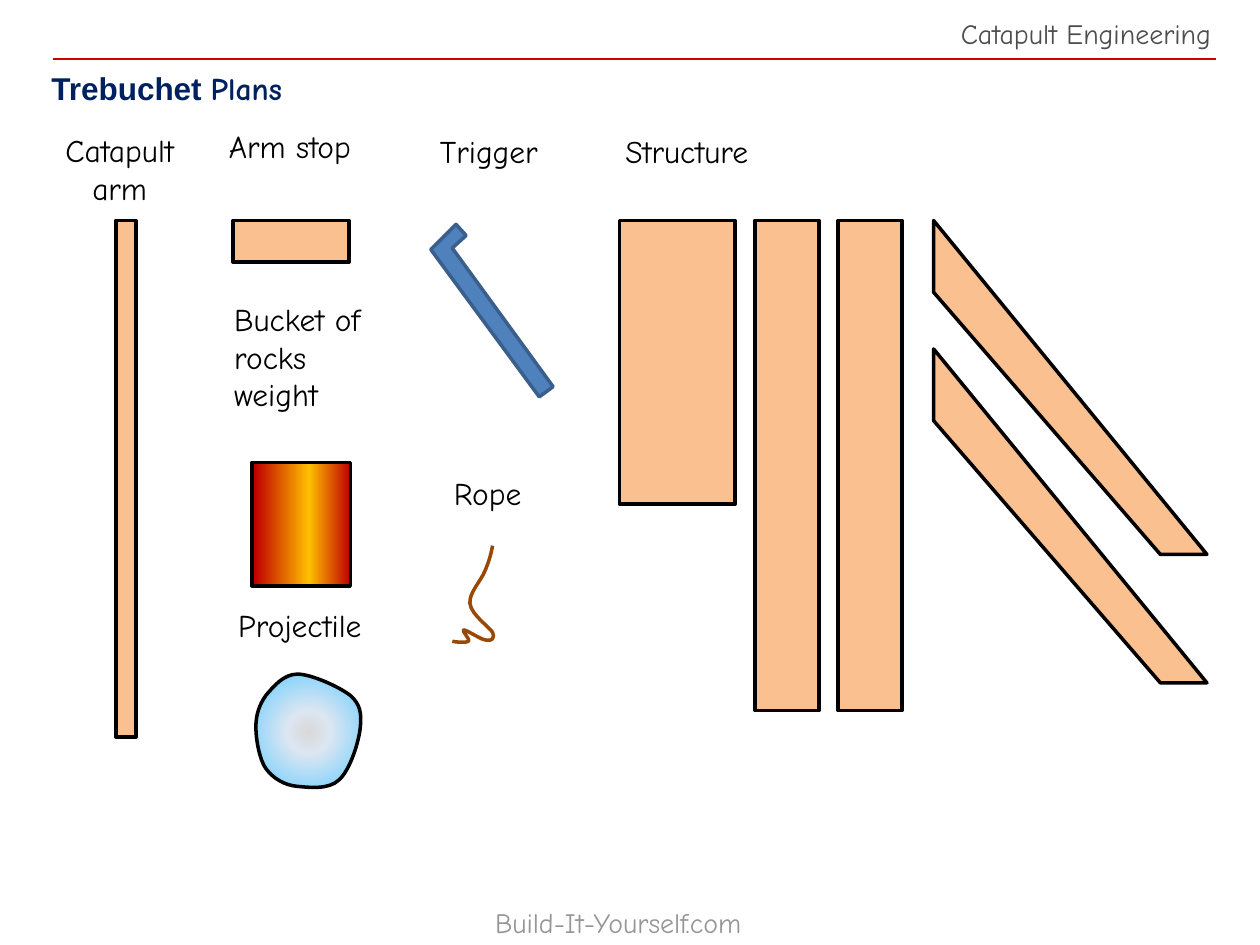
"""Build the Trebuchet Plans slide: labelled catapult parts."""
from lxml import etree
from pptx import Presentation
from pptx.dml.color import RGBColor
from pptx.enum import shapes, text
from pptx.oxml import ns
from pptx.util import Pt

BLACK, WOOD = "000000", "FAC090"
LEFT, CENTER, RIGHT = text.PP_ALIGN.LEFT, text.PP_ALIGN.CENTER, text.PP_ALIGN.RIGHT
SANS, COMIC = "Arial", "Comic Neue"

HEADER = ("Catapult Engineering", 529.9, 5.8, 169.2, 26.6, RIGHT, 16, "4D4D4D")
FOOTER = ("Build-It-Yourself.com", 275.8, 514.1, 177.1, 26.6, LEFT, 16, "969696")
TITLE = [("Trebuchet ", SANS), ("Plans", COMIC)]
TITLE_BOX = (22.3, 36, 429.1, 20.2)
LABELS = [
    ("Bucket of rocks\nweight", 126.7, 167.8, 95, 72.7, LEFT),
    ("Structure", 329.8, 72, 125.3, 51.1, CENTER),
    ("Trigger", 216.7, 72, 125.3, 51.1, CENTER),
    ("Catapult arm", 18, 71.3, 100.8, 72.7, CENTER),
    ("Projectile", 108.7, 342.7, 125.3, 28.8, CENTER),
    ("Arm stop", 103, 69.1, 125.3, 51.1, CENTER),
    ("Rope", 216, 267.1, 125.3, 51.1, CENTER),
]
BOARD_TOP = 126
BOARDS = [
    (66.2, 11.5, 295.2),
    (133.2, 66.2, 23.8),
    (353.9, 66.2, 162),
    (431.3, 36.7, 280),
    (478.8, 36.7, 280),
]
BRACE_LEFT, BRACE_TOPS = 533.5, (126, 199.4)
BRACE = [(0, 0), (156.2, 190.8), (129.6, 190.8), (0, 41)]
TRIGGER = [(266.4, 134.6), (260.6, 128.2), (246.2, 142.6),
           (308.2, 226.8), (316.1, 221), (258.5, 141.8)]
ROPE = [
    (281.5, 311.8),
    (280.8, 316.1), (279.4, 321.1), (277.2, 326.2),
    (275, 331.9), (267.8, 339.1), (268.6, 344.9),
    (269.3, 351.4), (280.1, 358.6), (281.5, 361.4),
    (283, 365), (280.8, 366.5), (277.9, 365.8),
    (275, 365.8), (267.1, 360), (265, 360),
    (263.5, 360), (268.6, 365), (267.8, 366.5),
    (266.4, 367.2), (262.8, 367.2), (258.5, 366.5),
]
PROJECTILE = [
    (151.9, 439.2),
    (156.2, 445), (162.7, 448.6), (169.2, 449.3),
    (176.4, 450), (187.9, 451.4), (193.7, 445.7),
    (200.2, 439.9), (205.2, 423.4), (205.9, 415.4),
    (206.6, 407.5), (205.9, 402.5), (200.2, 397.4),
    (193.7, 392.4), (177.8, 385.2), (169.9, 385.2),
    (162, 385.2), (156.2, 392.4), (151.9, 397.4),
    (148.3, 402.5), (146.2, 408.2), (146.2, 415.4),
    (146.2, 422.6), (148.3, 434.2), (151.9, 439.2),
]
BUCKET = (144, 264.2, 56.2, 70.6)
BUCKET_STOPS = [(0, "C00000"), (42, "FFC000"), (97, "C00000")]
STONE_STOPS = [(0, "D9D9D9"), (28, "DCE6F2"), (97, "66CCFF")]


def color(value):
    return RGBColor.from_string(value)


def add_child(parent, tag, **attributes):
    child = etree.SubElement(parent, ns.qn(tag))
    for name, value in attributes.items():
        child.set(name, str(value))
    return child


def style(shape, fill=None, line=BLACK):
    shape.shadow.inherit = False
    if fill:
        shape.fill.solid()
        shape.fill.fore_color.rgb = color(fill)
    else:
        shape.fill.background()
    shape.line.color.rgb = color(line)
    shape.line.width = Pt(2)
    return shape


def set_gradient(shape, stops, circular=False):
    properties = shape.element.spPr
    gradient = etree.Element(ns.qn("a:gradFill"), rotWithShape="1")
    stop_list = add_child(gradient, "a:gsLst")
    for position, value in stops:
        stop = add_child(stop_list, "a:gs", pos=position * 1000)
        add_child(stop, "a:srgbClr", val=value)
    if circular:
        focus = add_child(gradient, "a:path", path="circle")
        add_child(focus, "a:fillToRect", l=50000, t=50000, r=50000, b=50000)
    else:
        add_child(gradient, "a:lin", ang=180 * 60000, scaled=0)
    properties.replace(properties.find(ns.qn("a:noFill")), gradient)


def add_rectangle(slide, left, top, width, height, fill=None):
    box = map(Pt, (left, top, width, height))
    return style(slide.shapes.add_shape(shapes.MSO_SHAPE.RECTANGLE, *box), fill)


def add_outline(slide, points, fill=None, line=BLACK, close=True):
    start, *others = [(Pt(x), Pt(y)) for x, y in points]
    builder = slide.shapes.build_freeform(*start)
    builder.add_line_segments(others, close=close)
    return style(builder.convert_to_shape(), fill, line)


def add_curve(slide, points, line=BLACK, close=True):
    """Join cubic curves, each given by two control points and an end point."""
    shape = add_outline(slide, points, line=line, close=close)
    segments = list(shape.element.iter(ns.qn("a:lnTo")))
    for first in range(0, len(segments), 3):
        curve = etree.Element(ns.qn("a:cubicBezTo"))
        segments[first].addprevious(curve)
        for segment in segments[first:first + 3]:
            curve.append(segment[0])
            segment.getparent().remove(segment)
    return shape


def add_frame(slide, *box):
    frame = slide.shapes.add_textbox(*map(Pt, box)).text_frame
    frame.word_wrap = True
    return frame


def add_label(slide, words, left, top, width, height, align, size=18, ink=BLACK):
    frame = add_frame(slide, left, top, width, height)
    frame.text = words
    for paragraph in frame.paragraphs:
        paragraph.alignment = align
        paragraph.font.name = COMIC
        paragraph.font.size = Pt(size)
        paragraph.font.color.rgb = color(ink)


def add_title(slide):
    paragraph = add_frame(slide, *TITLE_BOX).paragraphs[0]
    paragraph.font.size = Pt(18)
    paragraph.font.bold = True
    paragraph.font.color.rgb = color("002060")
    for words, font_name in TITLE:
        run = paragraph.add_run()
        run.text = words
        run.font.name = font_name


def add_rule(slide):
    ends = map(Pt, (694.8, 33.8, 30.2, 33.8))
    rule = slide.shapes.add_connector(shapes.MSO_CONNECTOR.STRAIGHT, *ends)
    rule.line.color.rgb = color("CC0000")
    rule.line.width = Pt(1.5)
    add_child(rule.element.spPr, "a:effectLst")


def main():
    presentation = Presentation()
    presentation.slide_width, presentation.slide_height = Pt(720), Pt(540)
    slide = presentation.slides.add_slide(presentation.slide_layouts[6])
    add_rule(slide)
    add_title(slide)
    for label in [HEADER, *LABELS, FOOTER]:
        add_label(slide, *label)
    for left, width, height in BOARDS:
        add_rectangle(slide, left, BOARD_TOP, width, height, WOOD)
    for top in BRACE_TOPS:
        add_outline(slide, [(BRACE_LEFT + x, top + y) for x, y in BRACE], WOOD)
    add_outline(slide, TRIGGER, "4F81BD", "3A5F8C")
    add_curve(slide, ROPE, line="984807", close=False)
    set_gradient(add_rectangle(slide, *BUCKET), BUCKET_STOPS)
    set_gradient(add_curve(slide, PROJECTILE), STONE_STOPS, circular=True)
    presentation.save("out.pptx")


if __name__ == "__main__":
    main()
